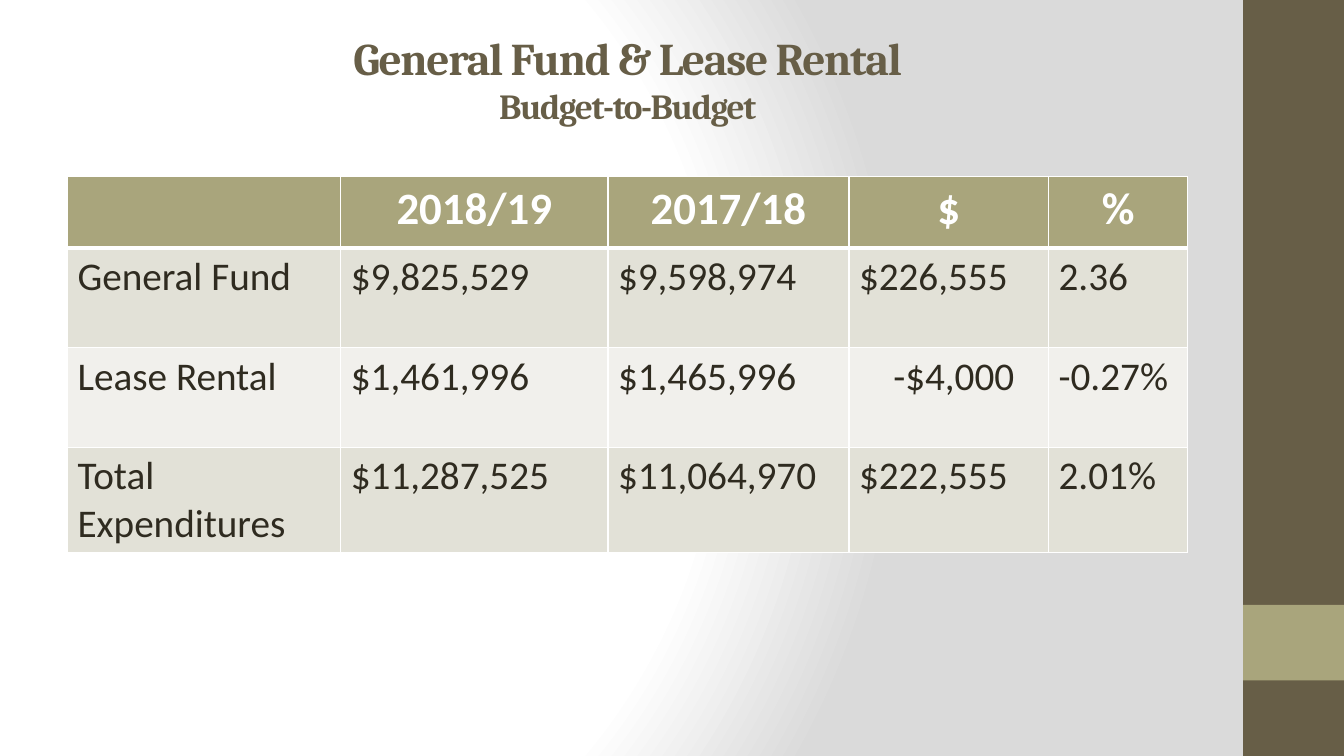
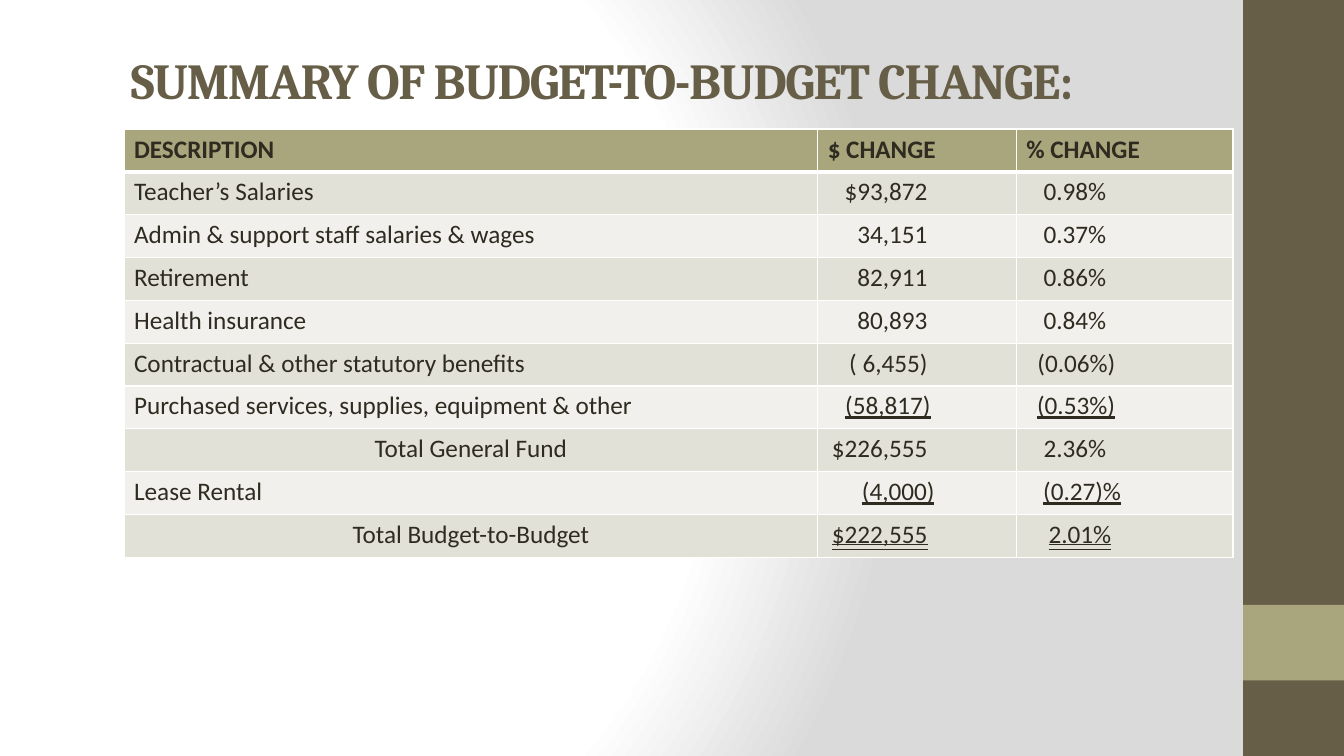
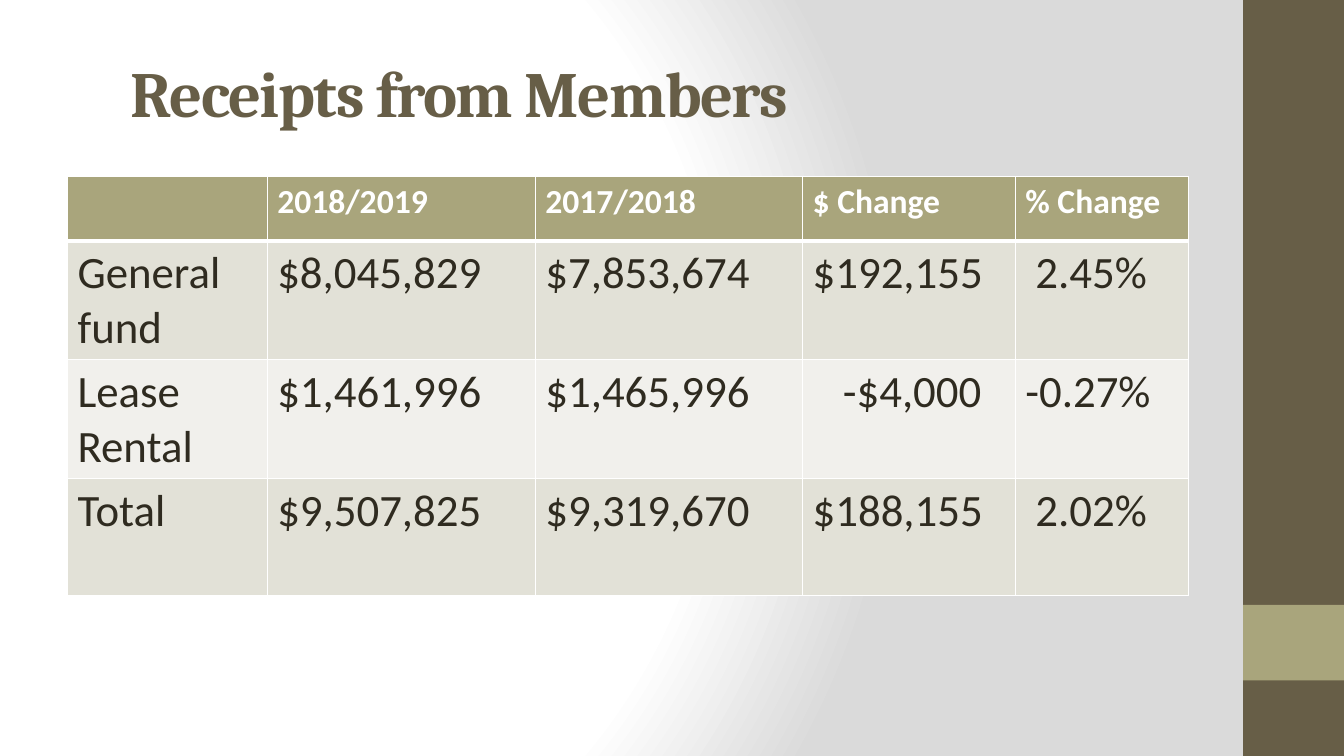
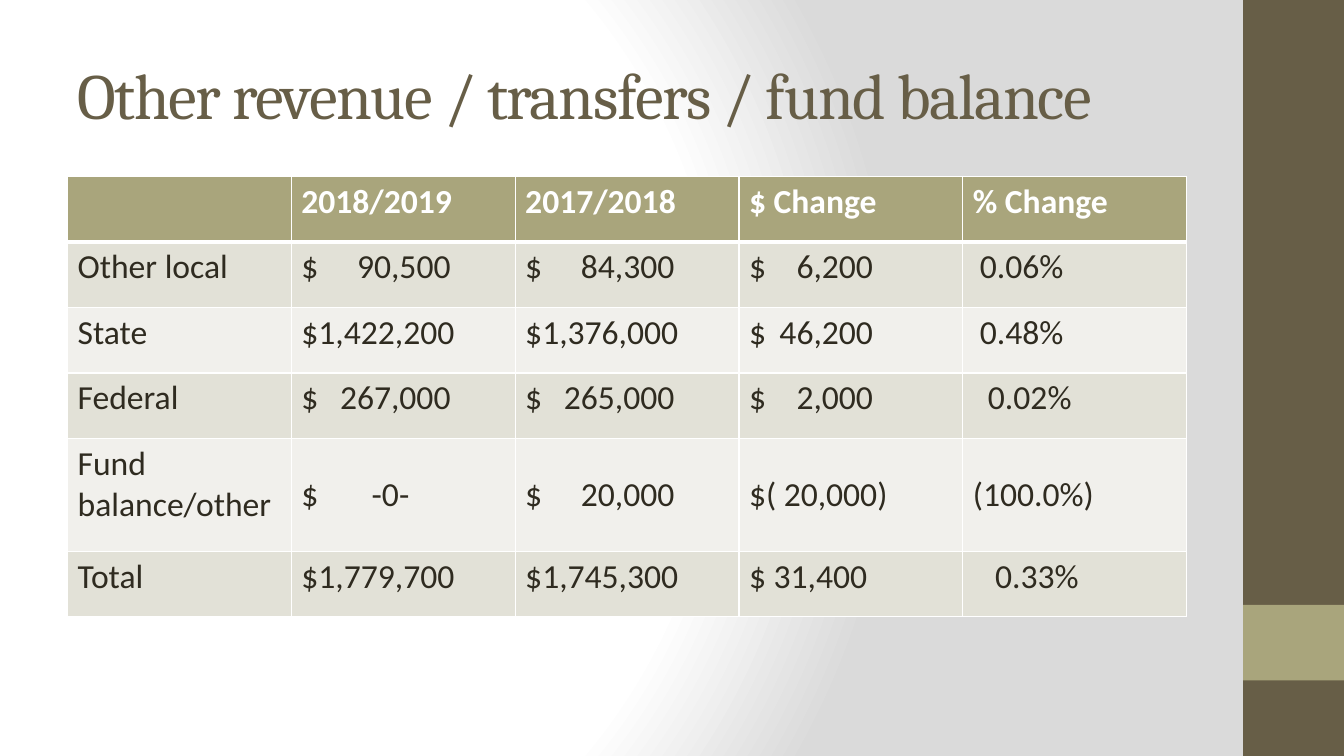
import pptx
import pptx.dml.color
import pptx.enum.shapes
import pptx.enum.text
import pptx.oxml
import pptx.oxml.ns
import pptx.util
from pptx.util import Inches

COLORS = {
    "title": "675E47",
    "accent": "A9A57C",
    "ink": "2F2B20",
    "white": "FFFFFF",
    "gray": "DADADA",
    "band_dark": "E2E1D7",
    "band_light": "F1F0EC",
}
TITLE_FONT, BODY_FONT = "Cambria", "Calibri"
ALIGN = pptx.enum.text.PP_ALIGN
MIDDLE = pptx.enum.text.MSO_ANCHOR.MIDDLE
UNDERLINE = pptx.enum.text.MSO_UNDERLINE
XMLNS = pptx.oxml.ns.nsdecls("a")


def rgb(name):
    return pptx.dml.color.RGBColor.from_string(COLORS[name])


def write(paragraph, text, size=18, font=BODY_FONT, color="ink", bold=False,
          underline=None, align=ALIGN.LEFT, spacing=None, indent=0, stop=None):
    """Add a run; indent and stop (a right-aligned tab) are in inches."""
    run = paragraph.add_run()
    run.text = text
    run.font.size = pptx.util.Pt(size)
    run.font.name = font
    run.font.bold = bold
    run.font.underline = underline
    run.font.color.rgb = rgb(color)
    if spacing is not None:
        run.font._element.set("spc", str(spacing * 100))
    paragraph.alignment = align
    properties = paragraph._p.get_or_add_pPr()
    if indent:
        properties.set("marL", str(Inches(indent)))
        properties.set("indent", "0")
    if stop:
        properties.append(pptx.oxml.parse_xml(
            f'<a:tabLst {XMLNS}><a:tab pos="{Inches(stop)}" algn="r"/></a:tabLst>'))


def set_borders(cell, bottom):
    """Give a cell white borders, 1 pt except for the bottom one."""
    properties = cell._tc.get_or_add_tcPr()
    for place, (side, width) in enumerate(
            [("lnL", 1), ("lnR", 1), ("lnT", 1), ("lnB", bottom)]):
        properties.insert(place, pptx.oxml.parse_xml(
            f'<a:{side} {XMLNS} w="{pptx.util.Pt(width)}"><a:solidFill>'
            f'<a:srgbClr val="{COLORS["white"]}"/></a:solidFill></a:{side}>'))


class Deck:
    """The shared style and the slide being built."""

    def __init__(self):
        self.presentation = pptx.Presentation()
        self.presentation.slide_width = Inches(13.33)
        self.presentation.slide_height = Inches(7.5)
        self.slide = None
        self.set_background()

    def set_background(self):
        master = self.presentation.slide_master
        master.background.fill.solid()
        plain = master.element.xpath(".//p:bgPr/a:solidFill")[0]
        stops = "".join(
            f'<a:gs pos="{percent * 1000}"><a:srgbClr val="{COLORS[color]}"/></a:gs>'
            for percent, color in [(0, "white"), (75, "white"), (100, "gray")])
        plain.getparent().replace(plain, pptx.oxml.parse_xml(
            f'<a:gradFill {XMLNS} rotWithShape="1"><a:gsLst>{stops}</a:gsLst>'
            '<a:path path="circle"><a:fillToRect l="20000" t="50000" r="100000" '
            'b="50000"/></a:path></a:gradFill>'))

    def new_slide(self):
        self.slide = self.presentation.slides.add_slide(
            self.presentation.slide_layouts[6])
        self.band(0, 7.5, "title")
        self.band(6, 0.75, "accent")

    def band(self, top, height, color):
        strip = self.slide.shapes.add_shape(
            pptx.enum.shapes.MSO_SHAPE.RECTANGLE,
            Inches(12.33), Inches(top), Inches(1), Inches(height))
        strip.shadow.inherit = False
        strip.fill.solid()
        strip.fill.fore_color.rgb = rgb(color)
        strip.line.fill.background()

    def title(self, lines, left=0.67, top=0.3, width=11.11, height=1.25,
              bottom_inset=0.05, **style):
        """Write a title from (text, size) lines."""
        frame = self.slide.shapes.add_textbox(
            Inches(left), Inches(top), Inches(width), Inches(height)).text_frame
        frame.word_wrap = True
        frame.vertical_anchor = MIDDLE
        frame.margin_bottom = Inches(bottom_inset)
        for number, (text, size) in enumerate(lines):
            paragraph = frame.add_paragraph() if number else frame.paragraphs[0]
            write(paragraph, text, size=size, font=TITLE_FONT, color="title",
                  spacing=-1, **style)

    def table(self, rows, widths, heights, header, body, columns=None,
              left=0.67, top=1.75):
        """Draw a table; a cell is a text or a (text, format) pair.

        columns maps a column number to the format of its body cells.
        """
        columns = columns or {}
        grid = self.slide.shapes.add_table(
            len(rows), len(widths), Inches(left), Inches(top),
            Inches(sum(widths)), Inches(sum(heights))).table
        for column, width in zip(grid.columns, widths):
            column.width = Inches(width)
        for r, (row, height) in enumerate(zip(rows, heights)):
            grid.rows[r].height = Inches(height)
            fill = "accent" if r == 0 else "band_dark" if r % 2 else "band_light"
            for c, entry in enumerate(row):
                text, extra = (entry, {}) if isinstance(entry, str) else entry
                style = header if r == 0 else {**body, **columns.get(c, {})}
                style = {**style, **extra}
                cell = grid.cell(r, c)
                cell.fill.solid()
                cell.fill.fore_color.rgb = rgb(fill)
                set_borders(cell, bottom=1 if r else 3)
                if style.pop("middle", False):
                    cell.vertical_anchor = MIDDLE
                if text:
                    write(cell.text_frame.paragraphs[0], text, **style)


def budget_to_budget(deck):
    deck.new_slide()
    deck.title([("General Fund & Lease Rental", 32.4), ("Budget-to-Budget", 25.2)],
               bottom_inset=0.35, bold=True, align=ALIGN.CENTER)
    deck.table(
        [["", "2018/19", "2017/18", "$", "%"],
         ["General Fund", "$9,825,529", "$9,598,974", "$226,555", "2.36"],
         ["Lease Rental", "$1,461,996", "$1,465,996",
          ("-$4,000", dict(indent=0.34)), "-0.27%"],
         ["Total Expenditures", "$11,287,525", "$11,064,970", "$222,555", "2.01%"]],
        widths=[2.71, 2.65, 2.39, 1.98, 1.38], heights=[0.71, 0.99, 0.99, 1.04],
        header=dict(size=32, color="white", bold=True, align=ALIGN.CENTER),
        body=dict(size=28))


def summary_of_change(deck):
    single = dict(underline=UNDERLINE.SINGLE_LINE)
    double = dict(underline=UNDERLINE.DOUBLE_LINE)
    centered = dict(align=ALIGN.CENTER)
    deck.new_slide()
    deck.title([("SUMMARY OF BUDGET-TO-BUDGET CHANGE:", 36)],
               left=1.2, top=0.31, width=11, height=0.96, bold=True)
    deck.table(
        [["DESCRIPTION", "$ CHANGE", "% CHANGE"],
         ["Teacher’s Salaries", "\t$93,872", "0.98%"],
         ["Admin & support staff salaries & wages", "\t34,151", "0.37%"],
         ["Retirement", "\t82,911", "0.86%"],
         ["Health insurance", "\t80,893", "0.84%"],
         ["Contractual & other statutory benefits", "\t( 6,455)",
          ("(0.06%)", dict(indent=0.11))],
         ["Purchased services, supplies, equipment & other",
          ("\t(58,817)", dict(stop=1.02, **single)),
          ("\t(0.53%)", dict(indent=0, stop=0.88, **single))],
         [("Total General Fund", centered), "\t$226,555", "2.36%"],
         ["Lease Rental", ("\t(4,000)", dict(stop=1.06, **single)),
          ("\t(0.27)%", dict(indent=0, stop=0.94, **single))],
         [("Total Budget-to-Budget", centered), ("\t$222,555", double),
          ("2.01%", dict(indent=0.22, **double))]],
        widths=[6.88, 1.97, 2.15], heights=[0.425] * 10, left=1.23, top=1.28,
        header=dict(bold=True), body={},
        columns={1: dict(stop=0.99), 2: dict(indent=0.17)})


def receipts_from_members(deck):
    deck.new_slide()
    deck.title([("Receipts from Members", 46)],
               left=1.2, top=0.31, width=11, height=1.2, bold=True)
    deck.table(
        [["", "2018/2019", "2017/2018", "$ Change", "% Change"],
         ["General fund", "$8,045,829", "$7,853,674", "$192,155",
          ("2.45%", dict(indent=0.1))],
         ["Lease Rental", "$1,461,996", "$1,465,996",
          ("-$4,000", dict(indent=0.3)), "-0.27%"],
         ["Total", "$9,507,825", "$9,319,670", "$188,155",
          ("2.02%", dict(indent=0.1))]],
        widths=[1.98, 2.66, 2.65, 2.11, 1.72], heights=[0.64, 1.18, 1.18, 1.16],
        header=dict(size=24, color="white", bold=True), body=dict(size=32))


def other_revenue(deck):
    middle = dict(middle=True)
    deck.new_slide()
    deck.title([("Other revenue / transfers / fund balance", 46)])
    deck.table(
        [["", "2018/2019", "2017/2018", "$ Change", "% Change"],
         ["Other local", "$\t90,500", "$\t84,300", "$\t6,200",
          ("0.06%", dict(indent=0.07))],
         ["State", "$1,422,200", "$1,376,000", "$\t46,200",
          ("0.48%", dict(indent=0.07))],
         ["Federal", "$\t267,000", "$\t265,000", "$\t2,000",
          ("0.02%", dict(indent=0.15))],
         ["Fund balance/other", ("$\t-0-", dict(stop=1.07, **middle)),
          ("$\t20,000", middle), ("$( 20,000)", middle), ("(100.0%)", middle)],
         ["Total", "$1,779,700", "$1,745,300", "$ 31,400",
          ("0.33%", dict(indent=0.22))]],
        widths=[2.22] * 5, heights=[0.65, 0.65, 0.65, 0.65, 1.12, 0.65],
        header=dict(size=24, color="white", bold=True), body=dict(size=24),
        columns={1: dict(stop=1.48), 2: dict(stop=1.48), 3: dict(stop=1.23)})


def main():
    deck = Deck()
    for build in (budget_to_budget, summary_of_change,
                  receipts_from_members, other_revenue):
        build(deck)
    deck.presentation.save("out.pptx")


if __name__ == "__main__":
    main()
